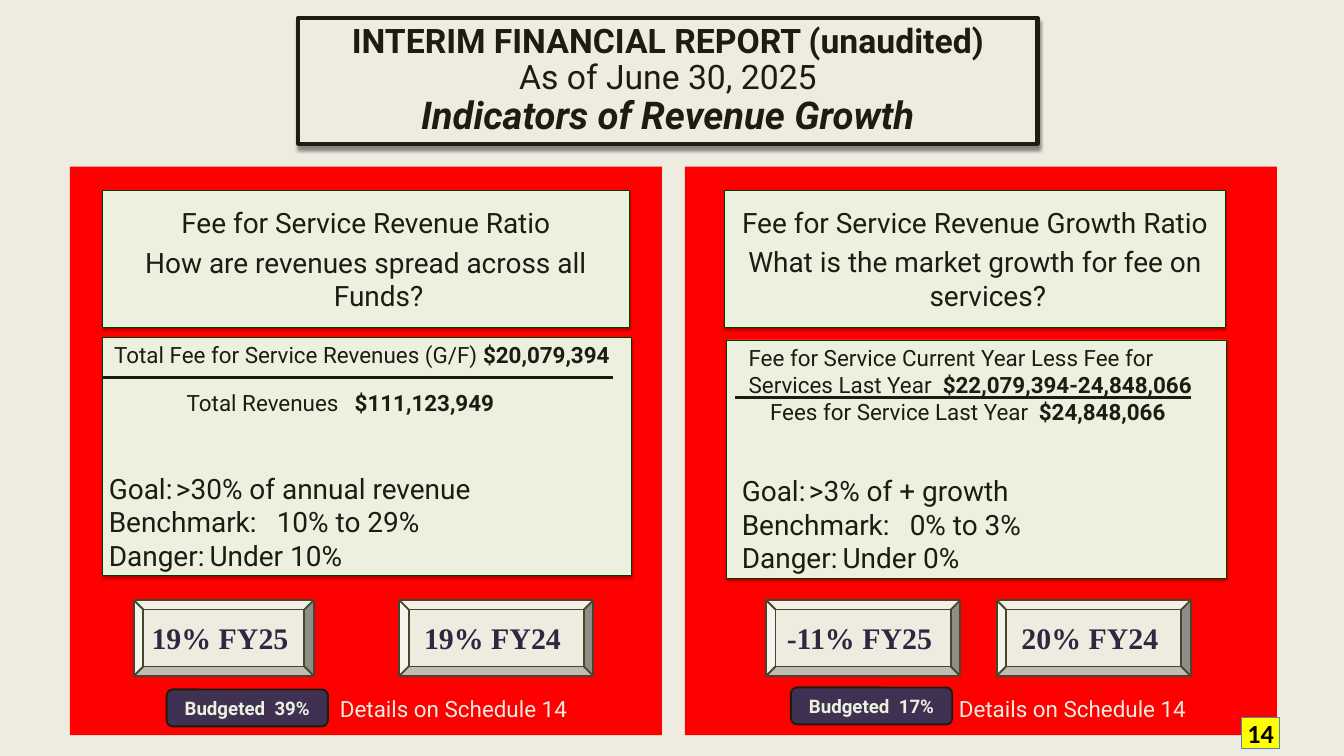
import pptx
import pptx.util
import pptx.dml.color
import pptx.enum.shapes
import pptx.enum.text
import pptx.oxml
import pptx.oxml.ns

PX = 9144
RGBColor = pptx.dml.color.RGBColor
Pt = pptx.util.Pt
SHAPE = pptx.enum.shapes.MSO_SHAPE
ALIGN = pptx.enum.text.PP_ALIGN
ANCHOR = pptx.enum.text.MSO_ANCHOR

CREAM = RGBColor(0xEE, 0xEC, 0xE1)
RED = RGBColor(0xFF, 0x00, 0x00)
INK = RGBColor(0x1E, 0x1C, 0x11)
PALE = RGBColor(0xEB, 0xF1, 0xDE)
GREEN = RGBColor(0x00, 0x3E, 0x00)
PURPLE = RGBColor(0x40, 0x31, 0x52)
PLUM = RGBColor(0x33, 0x24, 0x40)
OLIVE = RGBColor(0x4A, 0x45, 0x2A)
YELLOW = RGBColor(0xFF, 0xFF, 0x00)
BLUE = RGBColor(0x4F, 0x81, 0xBD)
BLACK = RGBColor(0x00, 0x00, 0x00)

BODY = dict(name="Roboto", size=Pt(24), bold=False, color=INK)
LARGE = dict(BODY, size=Pt(30))
LINK = dict(BODY, color=CREAM)
BADGE = dict(BODY, size=Pt(20), bold=True, color=PALE)
BUTTON = dict(name="Times New Roman", size=Pt(32), bold=True, color=PLUM)
NUMBER = dict(name="Calibri", size=Pt(28), bold=True, color=BLACK)
BOLD = dict(bold=True)


def add_effects(sp, shadow=None):
    ns = pptx.oxml.ns.nsdecls("a")
    inner = ""
    if shadow:
        alpha, blur, dist = shadow
        inner = (f'<a:outerShdw blurRad="{Pt(blur)}" dist="{Pt(dist)}" dir="5400000" rotWithShape="0">'
                 f'<a:srgbClr val="000000"><a:alpha val="{alpha * 1000}"/></a:srgbClr></a:outerShdw>')
    spPr = sp._element.spPr
    for old in spPr.findall(pptx.oxml.ns.qn("a:effectLst")):
        spPr.remove(old)
    spPr.append(pptx.oxml.parse_xml(f"<a:effectLst {ns}>{inner}</a:effectLst>"))


def add_box(s, kind, box, fill, line=None, width=0.75, shadow=None):
    sp = s.shapes.add_shape(kind, *(v * PX for v in box))
    sp.shadow.inherit = False
    sp.fill.solid()
    sp.fill.fore_color.rgb = fill
    if line is None:
        sp.line.fill.background()
    else:
        sp.line.color.rgb = line
        sp.line.width = Pt(width)
    if shadow:
        add_effects(sp, shadow)
    return sp


def add_rule(s, x1, x2, y):
    ln = s.shapes.add_connector(pptx.enum.shapes.MSO_CONNECTOR.STRAIGHT,
                                x1 * PX, y * PX, x2 * PX, y * PX)
    ln.line.color.rgb = INK
    ln.line.width = Pt(3)
    add_effects(ln)


def add_run(p, text, fmt):
    r = p.add_run()
    r.text = text
    for key, value in fmt.items():
        if key == "color":
            r.font.color.rgb = value
        else:
            setattr(r.font, key, value)


def write(sp, paras, base, align=ALIGN.LEFT, anchor=ANCHOR.TOP, insets=(10, 5, 10, 5)):
    tf = sp.text_frame
    frame = dict(zip(("margin_left", "margin_top", "margin_right", "margin_bottom"),
                     (v * PX for v in insets)), word_wrap=True, vertical_anchor=anchor)
    for key, value in frame.items():
        setattr(tf, key, value)
    for i, (runs, indent, tab, before) in enumerate(paras):
        p = tf.paragraphs[0] if i == 0 else tf.add_paragraph()
        p.alignment = align
        p.space_before = Pt(before)
        pPr = p._p.get_or_add_pPr()
        left, first = indent
        pPr.set("marL", str(left * PX))
        pPr.set("indent", str(first * PX))
        if tab:
            ns = pptx.oxml.ns.nsdecls("a")
            pPr.append(pptx.oxml.parse_xml(
                f'<a:tabLst {ns}><a:tab pos="{tab * PX}" algn="l"/></a:tabLst>'))
        for text, fmt in runs:
            add_run(p, text, dict(base, **fmt))


def para(*runs, indent=(0, 0), tab=0, before=0):
    return runs, indent, tab, before


def add_text(s, box, paras, base, **layout):
    write(s.shapes.add_textbox(*(v * PX for v in box)), paras, base, **layout)


def add_label(s, kind, box, text, fmt, fill, line, width, insets=(10, 5, 10, 5)):
    sp = add_box(s, kind, box, fill, line, width)
    write(sp, [para((text, {}))], fmt, ALIGN.CENTER, ANCHOR.MIDDLE, insets)


def add_title(s, box):
    sp = add_box(s, SHAPE.RECTANGLE, box, CREAM, INK, 4.5, (43, 4, 4))
    write(sp, [], BODY, anchor=ANCHOR.MIDDLE, insets=(0, 0, 0, 0))
    p = sp.text_frame.paragraphs[0]
    p.alignment = ALIGN.CENTER
    p.line_spacing = 0.9
    base = dict(BODY, size=Pt(36.1))
    add_run(p, "INTERIM FINANCIAL REPORT (unaudited)", dict(base, bold=True))
    p.add_line_break()
    add_run(p, "As of June 30, 2025", base)
    p.add_line_break()
    add_run(p, "Indicators of Revenue Growth", dict(base, size=Pt(41), bold=True, italic=True))


def add_panel(s, box, d):
    x, y, w, h = box

    def at(left, top, width, height):
        return x + left, y + top, width, height

    add_box(s, SHAPE.RECTANGLE, box, RED)
    for key in ("heading", "card"):
        sp = add_box(s, SHAPE.RECTANGLE, at(*d[key]), PALE, GREEN, 0.75, (35, 3, 2))
        if key == "heading":
            write(sp, [para((t, {}), indent=(38, -38), before=6) for t in d["question"]],
                  LARGE, ALIGN.CENTER, ANCHOR.MIDDLE)
    add_text(s, at(*d["ratio_box"]), d["ratio"], BODY, insets=d["ratio_insets"])
    x1, x2, rule_y = d["rule"]
    add_rule(s, x + x1, x + x2, y + rule_y)
    names = ("Goal:", "Benchmark:", "Danger:")
    add_text(s, at(*d["target_box"]),
             [para((f"{n}\t{v}", {}), tab=d["target_tab"]) for n, v in zip(names, d["targets"])],
             LARGE)
    for left, width, text in d["buttons"]:
        add_label(s, SHAPE.BEVEL, at(left, 645, width, 113), text, BUTTON, CREAM, OLIVE, 2)
    left, top, text = d["budget"]
    add_label(s, SHAPE.ROUNDED_RECTANGLE, at(left, top, 240, 55), text, BADGE, PURPLE, INK, 2)
    add_text(s, at(d["details"], 781, 385, 50), [para(("Details on Schedule 14", {}))], LINK)


SHARE = dict(
    heading=(48, 36, 785, 203), card=(49, 254, 786, 354),
    question=("Fee for Service Revenue Ratio", "How are revenues spread across all Funds?"),
    ratio_box=(49, 254, 786, 140), ratio_insets=(10, 6, 10, 5),
    ratio=[para(("Total Fee for Service Revenues (G/F) ", {}), ("$20,079,394", BOLD), indent=(7, 0)),
           para(("Total Revenues\t", {}), ("$111,123,949", BOLD),
                indent=(115, 0), tab=539, before=22)],
    rule=(49, 808, 314),
    target_box=(48, 448, 785, 162), target_tab=320,
    targets=(">30% of annual revenue", "10% to 29%", "Under 10%"),
    buttons=((95, 268, "19% FY25 "), (490, 289, "19% FY24 ")),
    budget=(144, 778, "Budgeted  39%"), details=392)

GROWTH = dict(
    heading=(59, 35, 746, 204), card=(62, 258, 744, 354),
    question=("Fee for Service Revenue Growth Ratio", "What is the market growth for fee on services?"),
    ratio_box=(75, 259, 754, 131), ratio_insets=(20, 5, 10, 5),
    ratio=[para(("Fee for Service Current Year Less Fee for Services Last Year  ", {}),
                ("$22,079,394-24,848,066", BOLD)),
           para(("Fees for Service Last Year\t", {}), ("$24,848,066", BOLD),
                indent=(32, 0), tab=441)],
    rule=(75, 753, 344),
    target_box=(75, 452, 706, 162), target_tab=272,
    targets=(">3% of + growth", "0% to 3%", "Under 0%"),
    buttons=((381, 289, "-11% FY25 ")[:0] or (121, 289, "-11% FY25 "), (464, 289, "20% FY24 ")),
    budget=(158, 775, "Budgeted  17%"), details=398)


def main():
    prs = pptx.Presentation()
    prs.slide_width, prs.slide_height = 2000 * PX, 1125 * PX
    s = prs.slides.add_slide(prs.slide_layouts[6])
    s.background.fill.solid()
    s.background.fill.fore_color.rgb = CREAM
    add_title(s, (444, 27, 1100, 187))
    for i, d in enumerate((SHARE, GROWTH)):
        add_panel(s, (104 + i * 915, 248, 881, 846), d)
    add_label(s, SHAPE.RECTANGLE, (1848, 1067, 56, 47), "14", NUMBER, YELLOW, BLUE, 0.75, (0, 0, 0, 0))
    prs.save("out.pptx")


if __name__ == "__main__":
    main()
